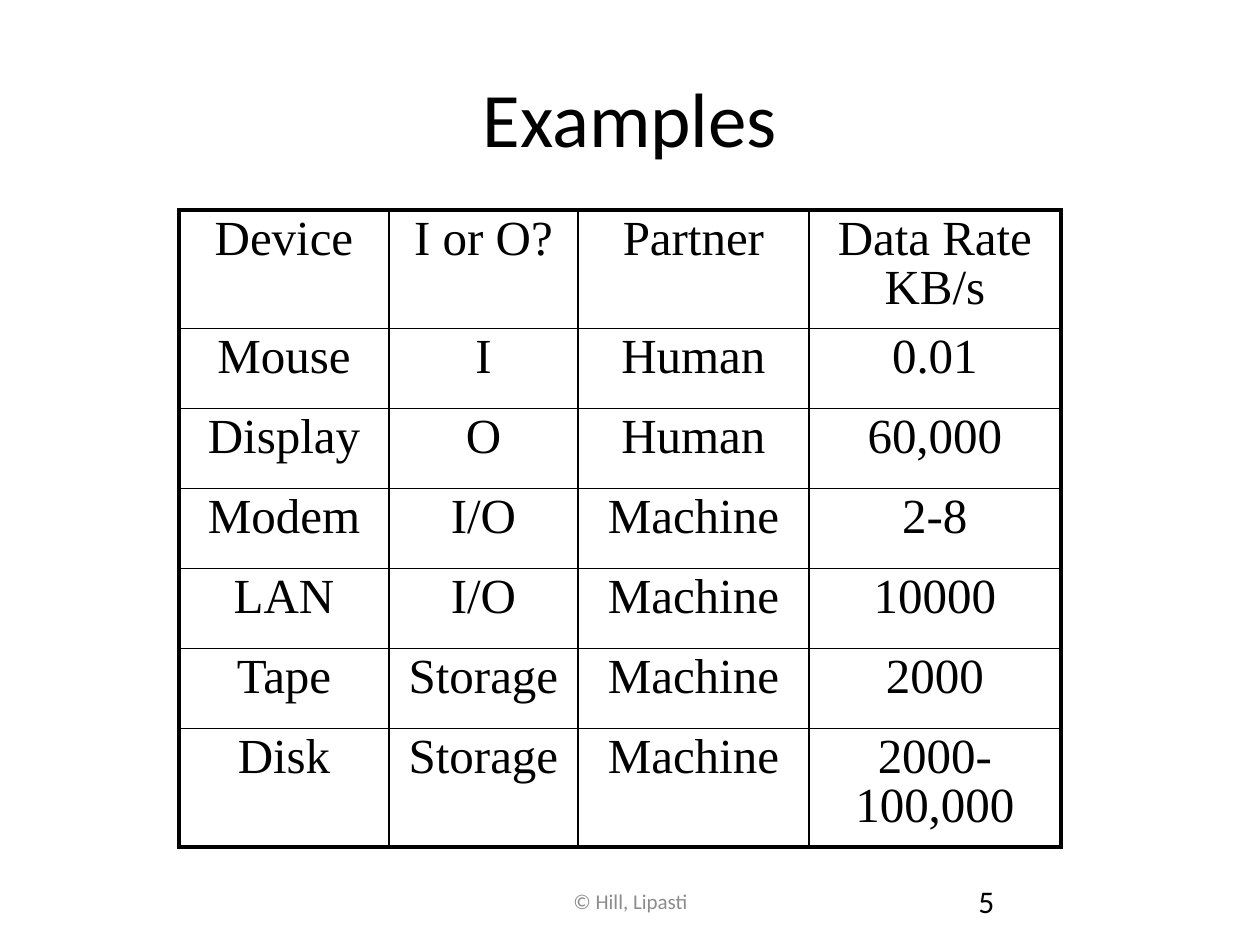
from lxml.etree import SubElement as Sub
from pptx import Presentation
from pptx.dml.color import RGBColor as Color
from pptx.enum.text import MSO_ANCHOR as Anchor, PP_ALIGN as Align
from pptx.oxml.ns import qn
from pptx.util import Pt

PX = 914400 // 126
THEME = {
    "ink": "000000", "muted": "8C8C8C",
    "sans": "Calibri", "serif": "Times New Roman",
    "title": 44, "table": 28, "number": 18, "footer": 12,
    "outer": 2.25, "inner": 1,
}


def write(frame, text, size, font, color, align):
    para = frame.paragraphs[0]
    para.alignment = align
    span = para.add_run()
    span.text = text
    formats = {"size": Pt(THEME[size]), "name": THEME[font]}
    for key, value in formats.items():
        setattr(span.font, key, value)
    span.font.color.rgb = Color.from_string(THEME[color])
    return para


def draw_border(cell, side, weight):
    line = Sub(cell._tc.get_or_add_tcPr(), qn(f"a:{side}"), w=str(Pt(THEME[weight])))
    fill = Sub(line, qn("a:solidFill"))
    Sub(fill, qn("a:srgbClr"), val=THEME["ink"])


deck = Presentation()
deck.slide_width, deck.slide_height = 1260 * PX, 945 * PX
page = deck.slides.add_slide(deck.slide_layouts[6])

labels = [
    ("© Hill, Lipasti", (431, 876, 399, 50), "footer", "muted", Align.CENTER, 0),
    ("5", (903, 876, 294, 50), "number", "ink", Align.LEFT, 63),
    ("Examples", (63, 38, 1134, 158), "title", "ink", Align.CENTER, 0),
]
for text, place, size, color, align, indent in labels:
    box = page.shapes.add_textbox(*(length * PX for length in place))
    box.text_frame.word_wrap = True
    box.text_frame.vertical_anchor = Anchor.MIDDLE
    para = write(box.text_frame, text, size, "sans", color, align)
    if indent:
        para._p.get_or_add_pPr().set("marL", str(indent * PX))

devices = [
    ("Device", "I or O?", "Partner", "Data Rate KB/s"),
    ("Mouse", "I", "Human", "0.01"),
    ("Display", "O", "Human", "60,000"),
    ("Modem", "I/O", "Machine", "2-8"),
    ("LAN", "I/O", "Machine", "10000"),
    ("Tape", "Storage", "Machine", "2000"),
    ("Disk", "Storage", "Machine", "2000-100,000"),
]
widths = [210, 189, 231, 252]
row_height = 80
last_row, last_column = len(devices) - 1, len(widths) - 1

table = page.shapes.add_table(
    len(devices), len(widths), 179 * PX, 210 * PX,
    sum(widths) * PX, row_height * len(devices) * PX,
).table
table.first_row = table.horz_banding = False
for column, width in zip(table.columns, widths):
    column.width = width * PX

for r, device in enumerate(devices):
    table.rows[r].height = row_height * PX
    for c, text in enumerate(device):
        cell = table.cell(r, c)
        para = write(cell.text_frame, text, "table", "serif", "ink", Align.CENTER)
        para.line_spacing = 0.9
        before = Sub(para._p.get_or_add_pPr(), qn("a:spcBef"))
        Sub(before, qn("a:spcPct"), val="20000")
        edges = {"lnL": c == 0, "lnR": c == last_column, "lnT": r == 0, "lnB": r == last_row}
        for side, is_outer in edges.items():
            draw_border(cell, side, "outer" if is_outer else "inner")
        cell.fill.background()

deck.save("out.pptx")
